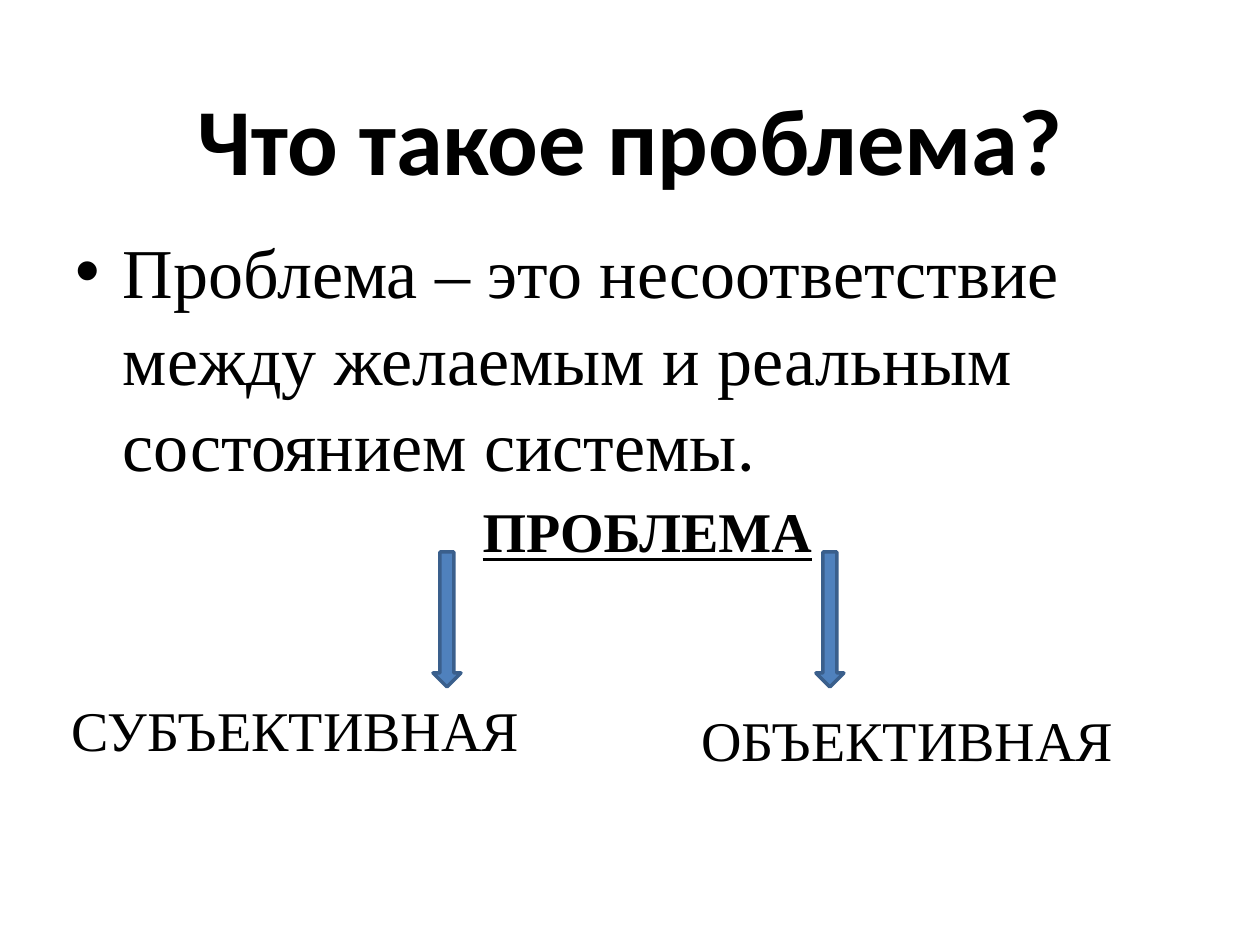
import pptx
import pptx.util
import pptx.dml.color
import pptx.enum.shapes
import pptx.enum.text
from lxml import etree

PX = 914400 // 126
COLORS = {"text": "000000", "arrow": "4F81BD", "arrow_edge": "3A5F8C"}
SERIF, SANS = "Times New Roman", "Calibri"

# Content; boxes are left, top, width, height in px
TITLE = ("Что такое проблема?", (63, 38, 1134, 158))
DEFINITION = ("Проблема – это несоответствие между желаемым и реальным "
              "состоянием системы", ".")
ROOT = "ПРОБЛЕМА"
BODY_BOX = (63, 220, 1134, 624)
KINDS = [("СУБЪЕКТИВНАЯ", (59, 689, 532, 81)),
         ("ОБЪЕКТИВНАЯ", (689, 699, 441, 81))]
ARROW_LEFTS = (433, 816)
ARROW_TOP, ARROW_WIDTH, ARROW_HEIGHT = 552, 28, 135


def px(*lengths):
    return [length * PX for length in lengths]


def rgb(name):
    return pptx.dml.color.RGBColor.from_string(COLORS[name])


def place(shape, box):
    shape.left, shape.top, shape.width, shape.height = px(*box)


def style(run, size, font=SERIF, bold=False, underline=False):
    run.font.size = pptx.util.Pt(size)
    run.font.name = font
    run.font.bold = bold
    run.font.underline = underline
    run.font.color.rgb = rgb("text")


deck = pptx.Presentation()
deck.slide_width, deck.slide_height = px(1260, 945)
slide = deck.slides.add_slide(deck.slide_layouts[1])

# Title, set low in its box
title = slide.shapes.title
place(title, TITLE[1])
title.text_frame.text = TITLE[0]
title.text_frame.margin_top = 48 * PX
title.text_frame.auto_size = pptx.enum.text.MSO_AUTO_SIZE.NONE
style(title.text_frame.paragraphs[0].runs[0], 54, SANS, bold=True)

# Definition and the root of the scheme
body = slide.placeholders[1]
place(body, BODY_BOX)
body.text_frame.auto_size = pptx.enum.text.MSO_AUTO_SIZE.NONE
definition = body.text_frame.paragraphs[0]
definition.line_spacing = 1.03
definition.space_before = pptx.util.Pt(4)
for text, font in zip(DEFINITION, (SERIF, SANS)):
    run = definition.add_run()
    run.text = text
    style(run, 40, font)

root = body.text_frame.add_paragraph()
root.text = ROOT
root.space_before = pptx.util.Pt(6.4)
style(root.runs[0], 32, bold=True, underline=True)
root_format = root._p.get_or_add_pPr()
root_format.set("marL", str(407 * PX))
root_format.set("indent", "0")
etree.SubElement(root_format, pptx.oxml.ns.qn("a:buNone"))

# Arrows down to the two kinds
for left in ARROW_LEFTS:
    arrow = slide.shapes.add_shape(
        pptx.enum.shapes.MSO_SHAPE.DOWN_ARROW,
        *px(left, ARROW_TOP, ARROW_WIDTH, ARROW_HEIGHT))
    arrow.shadow.inherit = False
    arrow.fill.solid()
    arrow.fill.fore_color.rgb = rgb("arrow")
    arrow.line.color.rgb = rgb("arrow_edge")
    arrow.line.width = pptx.util.Pt(2)

# Kinds of problem
for name, box in KINDS:
    kind = slide.shapes.add_textbox(*px(*box))
    kind.text_frame.word_wrap = True
    kind.text_frame.auto_size = pptx.enum.text.MSO_AUTO_SIZE.SHAPE_TO_FIT_TEXT
    kind.text_frame.text = name
    style(kind.text_frame.paragraphs[0].runs[0], 32)

deck.save("out.pptx")
